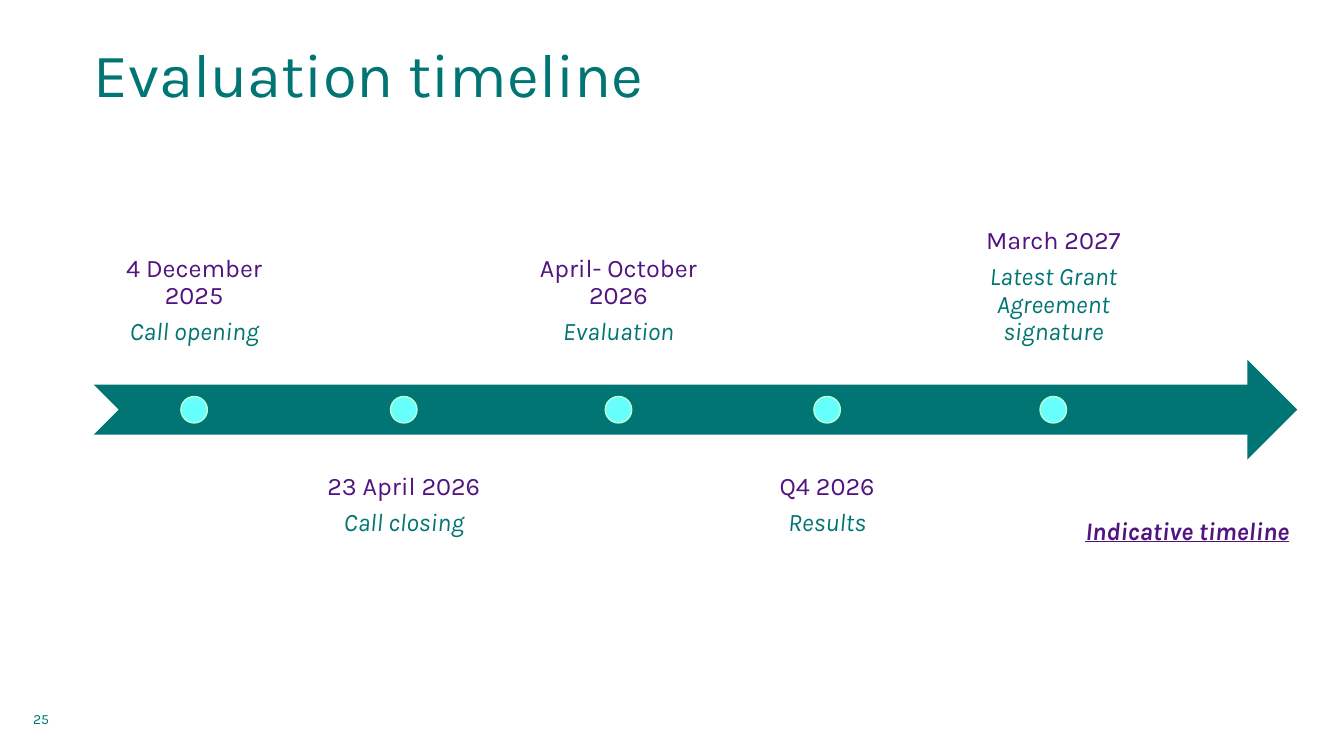
from pptx import Presentation
from pptx import util as u
from pptx.dml import color
from pptx.enum import shapes, text

TEAL, PURPLE, AQUA, MINT = "007573", "521480", "66FFFC", "BDFFD7"
FONT = "Karla"
MILESTONES = [
    ("4 December 2025", "Call opening", 143.3),
    ("23 April 2026", "Call closing", 151.9),
    ("April- October 2026", "Evaluation", 150.5),
    ("Q4 2026", "Results", 143.3),
    ("March 2027", "Latest Grant Agreement signature", 175.5),
]
LEFT, GAP = 67, 2.15
ARROW_TOP, ARROW_WIDTH, ARROW_HEIGHT = 257, 859.7, 71.3
LABEL_HEIGHT, LABEL_INSET, DOT = 145.7, 10, 18.9

deck = Presentation()
deck.slide_width, deck.slide_height = u.Pt(960), u.Pt(540)
page = deck.slides.add_slide(deck.slide_layouts[6])


def rgb(value):
    return color.RGBColor.from_string(value)


def add_text(lines, left, top, width, height, size=18, anchor=text.MSO_ANCHOR.TOP,
             align=text.PP_ALIGN.LEFT, insets=(7.2, 3.6, 7.2, 3.6), spacing=0.9,
             bold=False, underline=False):
    box = page.shapes.add_textbox(u.Pt(left), u.Pt(top), u.Pt(width), u.Pt(height))
    frame = box.text_frame
    frame.word_wrap = True
    frame.vertical_anchor = anchor
    (frame.margin_left, frame.margin_top,
     frame.margin_right, frame.margin_bottom) = map(u.Pt, insets)
    for number, (words, fill, italic) in enumerate(lines):
        para = frame.add_paragraph() if number else frame.paragraphs[0]
        para.alignment = align
        para.line_spacing = spacing
        if number < len(lines) - 1:
            para.space_after = u.Pt(6.3)
        span = para.add_run()
        span.text = words
        span.font.name, span.font.size = FONT, u.Pt(size)
        span.font.bold, span.font.italic = bold, italic
        span.font.underline = underline
        span.font.color.rgb = rgb(fill)


def add_shape(kind, left, top, width, height, fill, line=None):
    shape = page.shapes.add_shape(kind, u.Pt(left), u.Pt(top), u.Pt(width), u.Pt(height))
    shape.shadow.inherit = False
    shape.fill.solid()
    shape.fill.fore_color.rgb = rgb(fill)
    if line:
        shape.line.color.rgb = rgb(line)
        shape.line.width = u.Pt(1)
    else:
        shape.line.fill.background()


add_text([("25", TEAL, False)], 16.6, 494.6, 40.3, 28.8, size=10,
         anchor=text.MSO_ANCHOR.BOTTOM, spacing=1)
add_text([("Evaluation timeline", TEAL, False)], LEFT, 20.9, 828, 65.5, size=44,
         anchor=text.MSO_ANCHOR.MIDDLE, insets=(0, 3.6, 7.2, 0))
add_shape(shapes.MSO_SHAPE.NOTCHED_RIGHT_ARROW, LEFT, ARROW_TOP,
          ARROW_WIDTH, ARROW_HEIGHT, TEAL)

left = LEFT
for number, (date, event, width) in enumerate(MILESTONES):
    above = number % 2 == 0
    add_text([(date, PURPLE, False), (event, TEAL, True)], left,
             ARROW_TOP - LABEL_HEIGHT if above else ARROW_TOP + ARROW_HEIGHT,
             width, LABEL_HEIGHT, align=text.PP_ALIGN.CENTER,
             anchor=text.MSO_ANCHOR.BOTTOM if above else text.MSO_ANCHOR.TOP,
             insets=(LABEL_INSET,) * 4)
    add_shape(shapes.MSO_SHAPE.OVAL, left + (width - DOT) / 2,
              ARROW_TOP + (ARROW_HEIGHT - DOT) / 2, DOT, DOT, AQUA, MINT)
    left += width + GAP

add_text([("Indicative timeline", PURPLE, True)], 768.2, 364.3, 170.6, 29,
         spacing=1, bold=True, underline=True)

deck.save("out.pptx")
